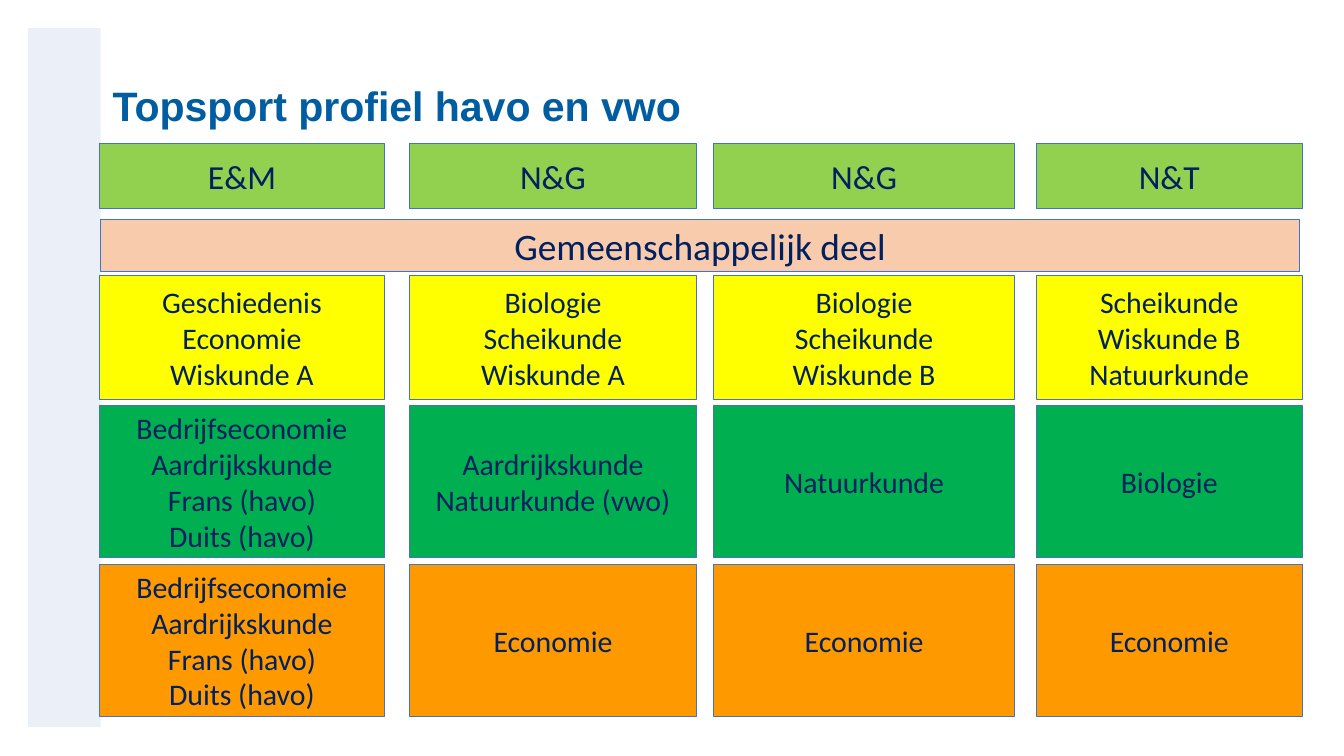
from lxml import etree
from pptx import Presentation, util as u
from pptx.dml.color import RGBColor
from pptx.enum import shapes, text
from pptx.oxml.ns import qn

NAVY = RGBColor(0x00, 0x20, 0x60)
TITLE_BLUE = RGBColor(0x00, 0x5D, 0xA2)
BLUE = RGBColor(0x44, 0x72, 0xC4)
LIME = RGBColor(0x92, 0xD0, 0x50)
PEACH = RGBColor(0xF8, 0xCB, 0xAD)
YELLOW = RGBColor(0xFF, 0xFF, 0x00)
GREEN = RGBColor(0x00, 0xB0, 0x50)
ORANGE = RGBColor(0xFF, 0x99, 0x00)

TITLE = "Topsport profiel havo en vwo"
COMMON = "Gemeenschappelijk deel"
CHOICES = ["Bedrijfseconomie", "Aardrijkskunde", "Frans (havo)", "Duits (havo)"]

COLUMNS = [(0.74, 2.12), (3.05, 2.13), (5.31, 2.24), (7.71, 1.98)]
ROWS = [
    (1.07, 0.48, LIME, 18, [["E&M"], ["N&G"], ["N&G"], ["N&T"]]),
    (2.05, 0.92, YELLOW, 16, [
        ["Geschiedenis", "Economie", "Wiskunde A"],
        ["Biologie", "Scheikunde", "Wiskunde A"],
        ["Biologie", "Scheikunde", "Wiskunde B"],
        ["Scheikunde", "Wiskunde B", "Natuurkunde"],
    ]),
    (3.02, 1.13, GREEN, 16, [
        CHOICES,
        ["Aardrijkskunde", "Natuurkunde (vwo)"],
        ["Natuurkunde"],
        ["Biologie"],
    ]),
    (4.2, 1.13, ORANGE, 16, [CHOICES] + [["Economie"]] * 3),
]


def add_rect(s, x, y, w, h, color):
    sp = s.shapes.add_shape(shapes.MSO_SHAPE.RECTANGLE, *map(u.Inches, (x, y, w, h)))
    sp.shadow.inherit = False
    sp.fill.solid()
    sp.fill.fore_color.rgb = color
    return sp


def add_box(s, x, y, w, h, color, lines, size):
    sp = add_rect(s, x, y, w, h, color)
    sp.line.color.rgb = BLUE
    sp.line.width = u.Pt(0.5)
    tf = sp.text_frame
    tf.word_wrap = True
    tf.vertical_anchor = text.MSO_ANCHOR.MIDDLE
    tf.text = "\n".join(lines)
    for p in tf.paragraphs:
        p.alignment = text.PP_ALIGN.CENTER
        p.font.name = "Calibri"
        p.font.size = u.Pt(size)
        p.font.color.rgb = NAVY


def add_title(s):
    tf = s.shapes.add_textbox(*map(u.Inches, (0.74, 0.59, 8.74, 0.44))).text_frame
    tf.word_wrap = True
    p = tf.paragraphs[0]
    p.text = TITLE
    p.line_spacing = 0.9
    p.font.name = "Arial"
    p.font.size = u.Pt(22)
    p.font.bold = True
    p.font.color.rgb = TITLE_BLUE


def main():
    prs = Presentation()
    prs.slide_width = u.Inches(10)
    prs.slide_height = prs.slide_width * 9 // 16
    s = prs.slides.add_slide(prs.slide_layouts[6])

    band = add_rect(s, 0.21, 0.21, 0.54, 5.2, BLUE)
    band.line.fill.background()
    color = band._element.spPr.find(qn("a:solidFill"))[0]
    etree.SubElement(color, qn("a:alpha")).set("val", "10000")

    add_title(s)
    add_box(s, 0.75, 1.63, 8.92, 0.39, PEACH, [COMMON], 20)
    for y, h, fill, size, cells in ROWS:
        for (x, w), lines in zip(COLUMNS, cells):
            add_box(s, x, y, w, h, fill, lines, size)

    prs.save("out.pptx")


if __name__ == "__main__":
    main()
